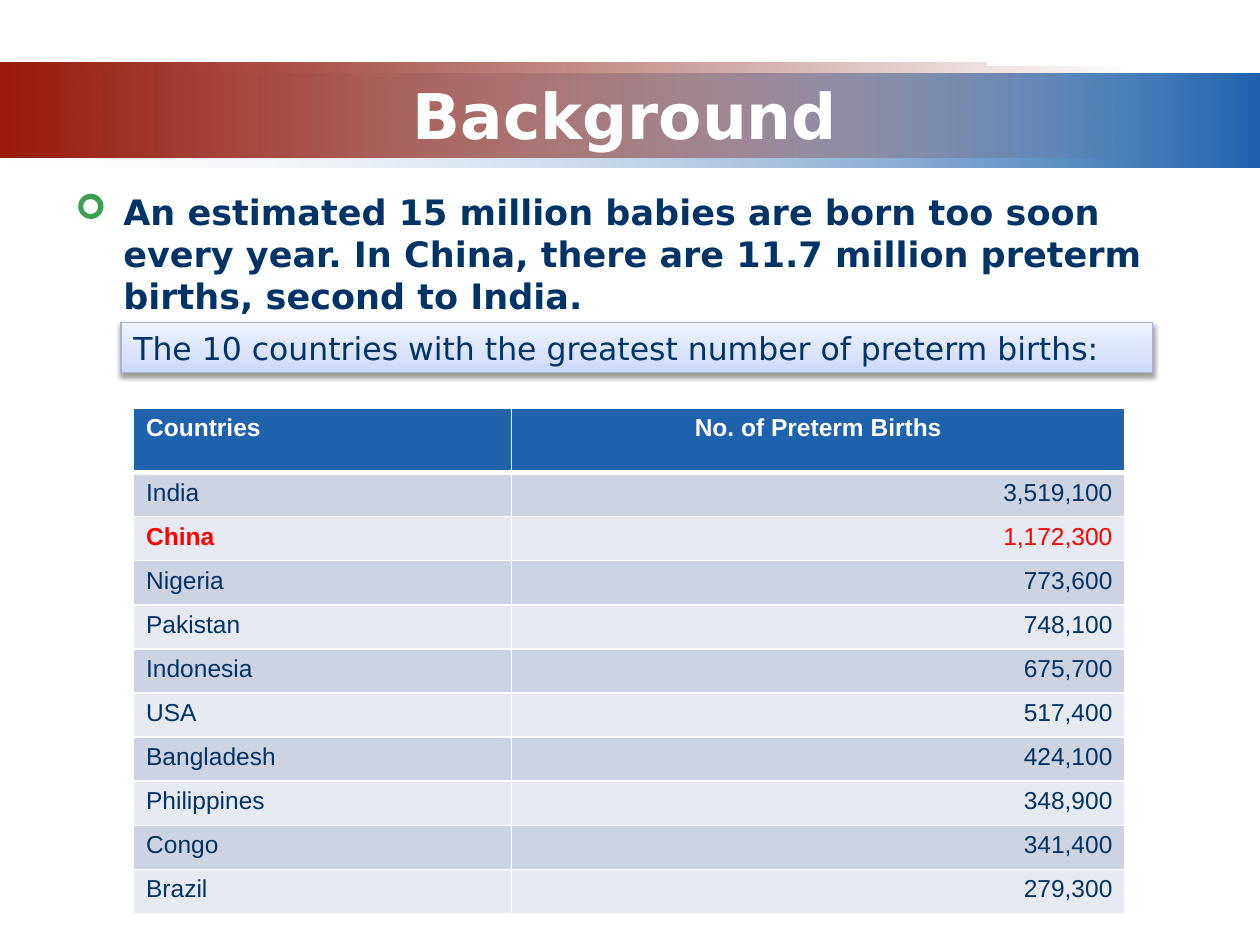
from lxml.etree import SubElement
from pptx import Presentation
from pptx.dml.color import RGBColor
from pptx.enum.shapes import MSO_SHAPE
from pptx.enum.text import MSO_ANCHOR, MSO_AUTO_SIZE, PP_ALIGN
from pptx.oxml.ns import qn
from pptx.util import Inches, Pt

WHITE = RGBColor(0xFF, 0xFF, 0xFF)
NAVY = RGBColor(0x00, 0x33, 0x66)
BLUE = RGBColor(0x1F, 0x63, 0xAD)
BRICK = RGBColor(0x99, 0x19, 0x0B)
DARK_BRICK = RGBColor(0x6D, 0x12, 0x08)
MIST = RGBColor(0xF1, 0xF2, 0xF7)
GREEN = RGBColor(0x3C, 0xA0, 0x51)
RED = RGBColor(0xFF, 0x00, 0x00)
BAND_DARK = RGBColor(0xCD, 0xD3, 0xE3)
BAND_LIGHT = RGBColor(0xE8, 0xEA, 0xF1)
CAPTION_LINE = RGBColor(0xA6, 0xB3, 0xCF)
CAPTION_STOPS = [
    (0, RGBColor(0xCA, 0xD8, 0xFA), 100),
    (35, RGBColor(0xD9, 0xE3, 0xFB), 100),
    (100, RGBColor(0xEF, 0xF3, 0xFE), 100),
]

HEADINGS = ("Countries", "No. of Preterm Births")
BIRTHS = [
    ("India", "3,519,100"),
    ("China", "1,172,300"),
    ("Nigeria", "773,600"),
    ("Pakistan", "748,100"),
    ("Indonesia", "675,700"),
    ("USA", "517,400"),
    ("Bangladesh", "424,100"),
    ("Philippines", "348,900"),
    ("Congo", "341,400"),
    ("Brazil", "279,300"),
]
HIGHLIGHTED = "China"


def add_xml(parent, tag, **attributes):
    return SubElement(parent, qn(tag), {k: str(v) for k, v in attributes.items()})


def add_color(parent, color, opacity=100):
    node = add_xml(parent, "a:srgbClr", val=color)
    if opacity < 100:
        add_xml(node, "a:alpha", val=opacity * 1000)


class SlideBuilder:
    text_font = "DejaVu Sans"
    table_font = "Arial"

    def __init__(self, slide):
        self.slide = slide

    def format_text(self, paragraph, size, color, bold=False, font=None, align=PP_ALIGN.LEFT):
        paragraph.alignment = align
        for run in paragraph.runs:
            run.font.name = font or self.text_font
            run.font.size = Pt(size)
            run.font.bold = bold
            run.font.color.rgb = color

    def box(self, area, fill=None, line=None):
        shape = self.slide.shapes.add_shape(MSO_SHAPE.RECTANGLE, *map(Inches, area))
        shape.shadow.inherit = False
        if fill is not None:
            shape.fill.solid()
            shape.fill.fore_color.rgb = fill
        if line is None:
            shape.line.fill.background()
        else:
            shape.line.color.rgb = line
            shape.line.width = Pt(0.75)
        return shape

    def gradient_box(self, area, stops, angle=0, line=None):
        """Stops are (position %, colour, opacity %); the angle runs clockwise."""
        shape = self.box(area, line=line)
        shape.fill.gradient()
        gradient = shape.element.spPr.find(qn("a:gradFill"))
        for child in list(gradient):
            gradient.remove(child)
        stop_list = add_xml(gradient, "a:gsLst")
        for position, color, opacity in stops:
            add_color(add_xml(stop_list, "a:gs", pos=position * 1000), color, opacity)
        add_xml(gradient, "a:lin", ang=angle * 60000, scaled=0)
        return shape

    def text(self, area, words, size, color, align=PP_ALIGN.LEFT, anchor=MSO_ANCHOR.TOP):
        frame = self.slide.shapes.add_textbox(*map(Inches, area)).text_frame
        frame.word_wrap = True
        frame.vertical_anchor = anchor
        frame.text = words
        self.format_text(frame.paragraphs[0], size, color, bold=True, align=align)
        return frame.paragraphs[0]

    def bullet_text(self, area, words, size, color, bullet_color):
        paragraph = self.text(area, words, size, color)
        paragraph.space_before = Pt(0.2 * size)
        properties = paragraph._p.get_or_add_pPr()
        properties.set("marL", str(Inches(0.38)))
        properties.set("indent", str(-Inches(0.38)))
        add_color(add_xml(properties, "a:buClr"), bullet_color)
        add_xml(properties, "a:buFont", typeface="Wingdings")
        add_xml(properties, "a:buChar", char="➢")

    def caption(self, area, words):
        shape = self.gradient_box(area, CAPTION_STOPS, angle=270, line=CAPTION_LINE)
        effects = shape.element.spPr.find(qn("a:effectLst"))
        shadow = add_xml(effects, "a:outerShdw", blurRad=Pt(3.1), dist=Pt(1.6),
                         dir=90 * 60000, rotWithShape=0)
        add_color(shadow, RGBColor(0, 0, 0), 38)
        frame = shape.text_frame
        frame.word_wrap = True
        frame.auto_size = MSO_AUTO_SIZE.SHAPE_TO_FIT_TEXT
        frame.vertical_anchor = MSO_ANCHOR.TOP
        frame.text = words
        self.format_text(frame.paragraphs[0], 18, NAVY)

    def cell(self, cell, words, fill, color, bold, align, bottom_width=1):
        cell.text = words
        self.format_text(cell.text_frame.paragraphs[0], 14, color, bold, self.table_font, align)
        properties = cell._tc.get_or_add_tcPr()
        for side in "LRTB":
            width = bottom_width if side == "B" else 1
            border = add_xml(properties, f"a:ln{side}", w=Pt(width))
            add_color(add_xml(border, "a:solidFill"), WHITE)
        cell.fill.solid()
        cell.fill.fore_color.rgb = fill

    def births_table(self, area, column_widths, header_height, row_height):
        table = self.slide.shapes.add_table(
            len(BIRTHS) + 1, len(HEADINGS), *map(Inches, area)).table
        for column, width in zip(table.columns, column_widths):
            column.width = Inches(width)
        for row in table.rows:
            row.height = Inches(row_height)
        table.rows[0].height = Inches(header_height)

        for column, (heading, align) in enumerate(zip(HEADINGS, (PP_ALIGN.LEFT, PP_ALIGN.CENTER))):
            self.cell(table.cell(0, column), heading, BLUE, WHITE, True, align, bottom_width=3)
        for row, (country, births) in enumerate(BIRTHS, start=1):
            fill = BAND_DARK if row % 2 else BAND_LIGHT
            marked = country == HIGHLIGHTED
            color = RED if marked else NAVY
            self.cell(table.cell(row, 0), country, fill, color, marked, PP_ALIGN.LEFT)
            self.cell(table.cell(row, 1), births, fill, color, False, PP_ALIGN.RIGHT)


def main():
    deck = Presentation()
    deck.slide_width, deck.slide_height = Inches(10), Inches(7.5)
    builder = SlideBuilder(deck.slides.add_slide(deck.slide_layouts[6]))

    builder.gradient_box((0, 0.58, 10, 0.75), [(0, MIST, 0), (100, BLUE, 100)])
    builder.gradient_box((0, 0.5, 9, 0.75), [(0, BRICK, 100), (100, DARK_BRICK, 0)])
    builder.text((0.92, 0.6, 8.08, 0.62), "Background", 36, WHITE,
                 PP_ALIGN.CENTER, MSO_ANCHOR.MIDDLE)
    builder.bullet_text(
        (0.5, 1.46, 8.99, 1.11),
        "An estimated 15 million babies are born too soon every year. "
        "In China, there are 11.7 million preterm births, second to India.",
        20, NAVY, GREEN)
    for blank_area in ((8.15, 7.06, 1.58, 0.44), (7.84, 0.28, 1.89, 0.24)):
        builder.box(blank_area, WHITE, WHITE)
    builder.caption((0.96, 2.56, 8.19, 0.4),
                    "The 10 countries with the greatest number of preterm births:")
    builder.births_table((1.06, 3.24, 7.87, 4.04), (3, 4.87), 0.51, 0.35)

    deck.save("out.pptx")


if __name__ == "__main__":
    main()
